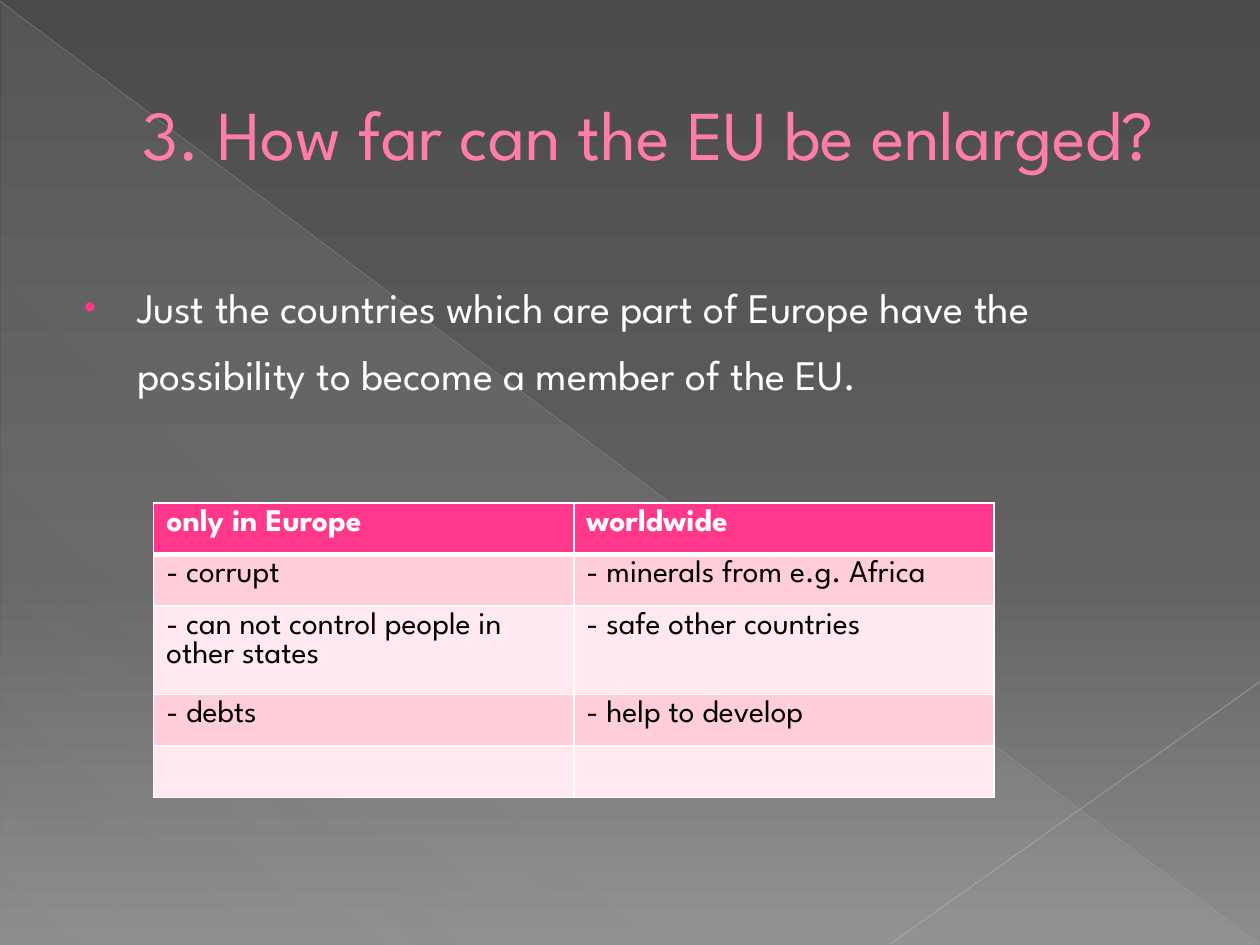
from pptx import Presentation
from pptx.dml.color import RGBColor
from pptx.enum.shapes import MSO_CONNECTOR as Conn, MSO_SHAPE as Kind
from pptx.enum.text import MSO_ANCHOR as Anchor, PP_ALIGN as Align
from pptx.oxml import parse_xml
from pptx.oxml.ns import nsdecls
from pptx.util import Inches, Pt

# Content
TITLE = "3. How far can the EU be enlarged?"
POINT = ("Just the countries which are part of Europe have the "
         "possibility to become a member of the EU.")
ROWS = [
    ("only in Europe", "worldwide"),
    ("- corrupt", "- minerals from e.g. Africa"),
    ("- can not control people in other states", "- safe other countries"),
    ("- debts", "- help to develop"),
    ("", ""),
]

# Theme: colours, type sizes, gradient stops (position, colour, opacity)
THEME = {
    "font": "League Spartan",
    "title": "FF7DA7", "edge": "B12761", "accent": "FF388C",
    "light": "FFFFFF", "dark": "000000", "bands": ("FFCEDA", "FFE8EE"),
    "big": 40, "mid": 24, "small": 18,
    "back": [(0, "4A4A4A", 100), (60, "626262", 100), (100, "8C8C8C", 100)],
    "sheen": [(0, "D2D2D2", 10), (70, "D2D2D2", 8), (100, "D2D2D2", 1)],
}
# Lines: from, to, colour, width, opacity
LINES = [
    ((0, 0.01), (9.99, 7.49), "BFBFBF", 0.39, 35),
    ((10, 5.41), (7.07, 7.49), "C6C6C6", 0.47, 45),
]


def node(tag, body="", attrs=""):
    return parse_xml(f'<a:{tag} {nsdecls("a")} {attrs}>{body}</a:{tag}>')


def solid(color):
    return f'<a:solidFill><a:srgbClr val="{color}"/></a:solidFill>'


def blend(root, stops, angle):
    """Swap the first solid fill under root for a gradient."""
    body = "".join(
        f'<a:gs pos="{pos * 1000}"><a:srgbClr val="{color}">'
        f'<a:alpha val="{alpha * 1000}"/></a:srgbClr></a:gs>'
        for pos, color, alpha in stops)
    old = root.xpath(".//a:solidFill")[0]
    old.getparent().replace(old, node(
        "gradFill", f'<a:gsLst>{body}</a:gsLst>'
        f'<a:lin ang="{angle * 60000}" scaled="0"/>', 'rotWithShape="1"'))


def write(frame, text, size, color, bold=False, space=None):
    para = frame.paragraphs[0]
    para.alignment = Align.LEFT
    para.line_spacing = space
    run = para.add_run()
    run.text = text
    font = run.font
    font.name, font.size, font.bold = THEME["font"], Pt(size), bold
    font.color.rgb = RGBColor.from_string(color)
    return para


def indent(para, left, first=0):
    props = para._p.get_or_add_pPr()
    props.set("marL", str(Inches(left)))
    props.set("indent", str(Inches(first)))
    return props


def border(cell, last):
    props = cell._tc.get_or_add_tcPr()
    for spot, side in enumerate("LRTB"):
        width = Pt(last if side == "B" else 1)
        props.insert(spot, node(f"ln{side}", solid(THEME["light"]), f'w="{width}"'))


def backdrop(slide):
    slide.background.fill.solid()
    slide.background.fill.fore_color.rgb = RGBColor.from_string(THEME["back"][0][1])
    blend(slide.element.xpath(".//p:bgPr")[0], THEME["back"], 90)

    sheen = slide.shapes.add_shape(
        Kind.RIGHT_TRIANGLE, Inches(0.01), Inches(0.02), Inches(9.98), Inches(7.48))
    sheen.shadow.inherit = False
    sheen.line.fill.background()
    sheen.fill.solid()
    sheen.fill.fore_color.rgb = RGBColor.from_string(THEME["sheen"][0][1])
    blend(sheen.element.spPr, THEME["sheen"], 133)

    for start, end, color, width, alpha in LINES:
        line = slide.shapes.add_connector(
            Conn.STRAIGHT, *(Inches(n) for n in start + end))
        line.line.width = Pt(width)
        line.line.color.rgb = RGBColor.from_string(color)
        props = line.element.spPr
        props.xpath(".//a:srgbClr")[0].append(node("alpha", attrs=f'val="{alpha * 1000}"'))
        props.append(node("effectLst"))


def heading(slide):
    title = slide.shapes.title
    title.left, title.top = Inches(0.5), Inches(0.29)
    title.width, title.height = Inches(9), Inches(1.53)
    title.text_frame.vertical_anchor = Anchor.MIDDLE
    para = write(title.text_frame, TITLE, THEME["big"], THEME["title"])
    indent(para, 0.53)
    props = para.runs[0]._r.get_or_add_rPr()
    props.insert(0, node("ln", solid(THEME["edge"]), f'w="{Pt(0.5)}"'))
    # Keep the title in front of the backdrop
    slide.shapes.element.append(title.element)


def bullet(slide):
    box = slide.shapes.add_textbox(Inches(0.5), Inches(2.06), Inches(9), Inches(5))
    box.text_frame.word_wrap = True
    para = write(box.text_frame, POINT, THEME["mid"], THEME["light"], space=1.32)
    props = indent(para, 0.49, -0.42)
    props.append(node("buClr", f'<a:srgbClr val="{THEME["accent"]}"/>'))
    props.append(node("buSzPct", attrs='val="80000"'))
    props.append(node("buFont", attrs='typeface="Arial"'))
    props.append(node("buChar", attrs='char="•"'))


def grid(slide):
    high = 0.41
    table = slide.shapes.add_table(
        len(ROWS), len(ROWS[0]), Inches(1.22), Inches(3.99),
        Inches(6.67), Inches(high * len(ROWS))).table
    for r, texts in enumerate(ROWS):
        table.rows[r].height = Inches(high)
        head = r == 0
        fill = THEME["accent"] if head else THEME["bands"][(r - 1) % 2]
        for c, text in enumerate(texts):
            cell = table.cell(r, c)
            cell.fill.solid()
            cell.fill.fore_color.rgb = RGBColor.from_string(fill)
            border(cell, 3 if head else 1)
            if text:
                write(cell.text_frame, text, THEME["small"],
                      THEME["light" if head else "dark"], bold=head)


def main():
    deck = Presentation()
    deck.slide_width, deck.slide_height = Inches(10), Inches(7.5)
    slide = deck.slides.add_slide(deck.slide_layouts[5])
    for part in (backdrop, heading, bullet, grid):
        part(slide)
    deck.save("out.pptx")


if __name__ == "__main__":
    main()
